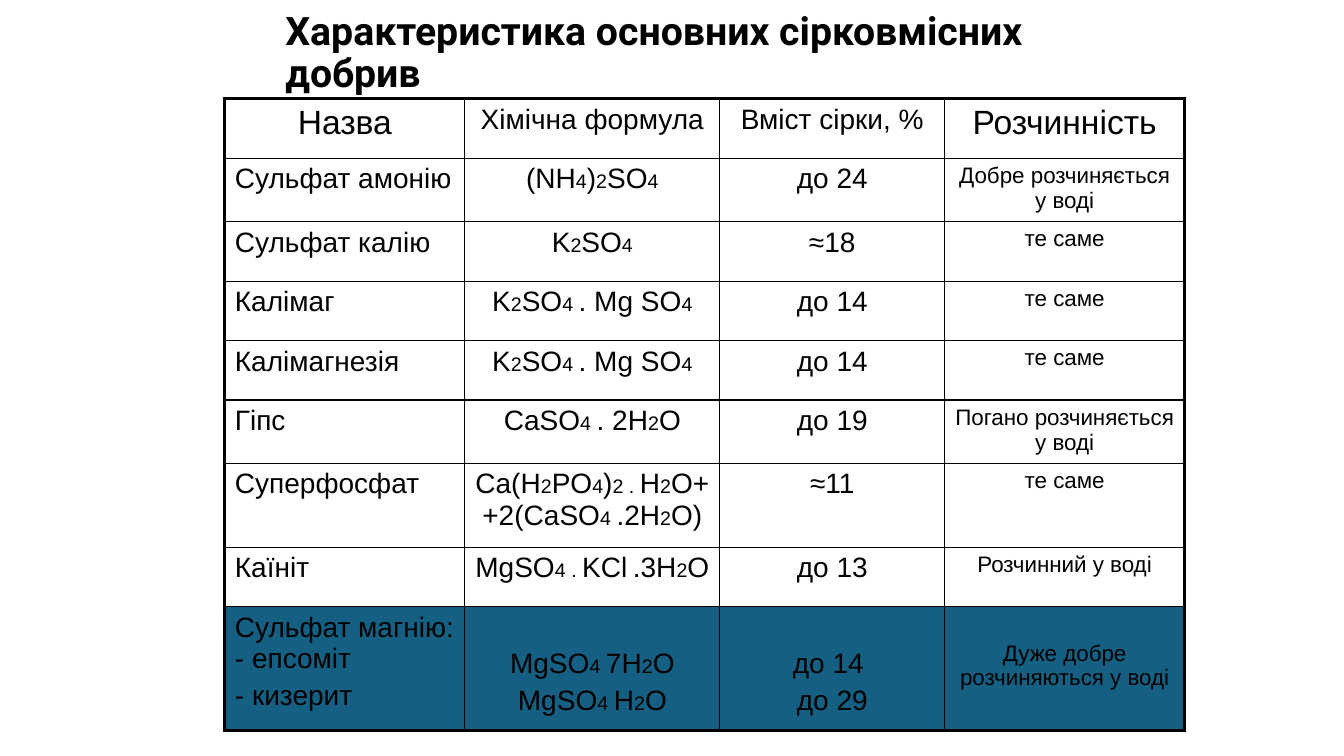
from pptx import Presentation
from pptx import util as u
from pptx.dml.color import RGBColor
from pptx.enum import text
from pptx.oxml import parse_xml
from pptx.oxml.ns import nsdecls

BLACK, WHITE, BLUE = "000000", "FFFFFF", "156082"
COLS = [2.38, 2.53, 2.23, 2.38]
ROWS = [0.59, 0.63, 0.59, 0.59, 0.59, 0.63, 0.83, 0.59, 1.23]
HEAD = [24, 20, 20, 24]
BODY = [20, 20, 20, 16]
DATA = [
    ["Назва", "Хімічна формула", "Вміст сірки, %", "Розчинність"],
    ["Сульфат амонію", "(NH_4_)_2_SO_4", "до 24", "Добре розчиняється у воді"],
    ["Сульфат калію", "K_2_SO_4", "≈18", "те саме"],
    ["Калімаг", "K_2_SO_4 _. Mg SO_4", "до 14", "те саме"],
    ["Калімагнезія", "K_2_SO_4 _. Mg SO_4", "до 14", "те саме"],
    ["Гіпс", "CaSO_4 _. 2H_2_O", "до 19", "Погано розчиняється у воді"],
    ["Суперфосфат", "Ca(H_2_PO_4_)_2 . _H_2_O+ +2(CaSO_4 _.2H_2_O)", "≈11", "те саме"],
    ["Каїніт", "MgSO_4 . _KCl_ _.3H_2_O", "до 13", "Розчинний у воді"],
    ["Сульфат магнію: - епсоміт\n- кизерит", "MgSO_4 _7H_2_O\nMgSO_4 _H_2_O",
     "до 14 \nдо 29", "Дуже добре розчиняються у воді"],
]
DROPS = [0.05, 0.41, 0.41, 0.34]


def color(code):
    return RGBColor.from_string(code)


def style(font, name, size, bold=False):
    font.name = name
    font.size = u.Pt(size)
    font.bold = bold
    font.color.rgb = color(BLACK)


def write(para, words, size):
    style(para.font, "Arial", size)
    for i, part in enumerate(words.split("_")):
        if part:
            run = para.add_run()
            run.text = part
            if i % 2:
                run.font.size = u.Pt(14)


def border(cell, row, col):
    outer = {"lnL": col == 0, "lnR": col == len(COLS) - 1,
             "lnT": row == 0, "lnB": row == len(ROWS) - 1}
    props = cell._tc.get_or_add_tcPr()
    for i, (side, edge) in enumerate(outer.items()):
        width = u.Pt(2.25 if edge else 1)
        props.insert(i, parse_xml(
            f'<a:{side} {nsdecls("a")} w="{width}"><a:solidFill>'
            f'<a:srgbClr val="{BLACK}"/></a:solidFill></a:{side}>'))


def fill_cell(cell, row, col):
    last = row == len(ROWS) - 1
    cell.fill.solid()
    cell.fill.fore_color.rgb = color(BLUE if last else WHITE)
    cell.margin_top = u.Inches(DROPS[col] if last else 0.05)
    border(cell, row, col)
    frame = cell.text_frame
    size = (BODY if row else HEAD)[col]
    for i, words in enumerate(DATA[row][col].split("\n")):
        para = frame.add_paragraph() if i else frame.paragraphs[0]
        if i:
            para.space_before = u.Pt(4)
        left = row and col == 0
        para.alignment = text.PP_ALIGN.LEFT if left else text.PP_ALIGN.CENTER
        write(para, words, size)


def add_title(slide, words):
    title = slide.shapes.title
    title.left, title.top = u.Inches(2.73), u.Inches(0)
    title.width, title.height = u.Inches(8.52), u.Inches(1.07)
    frame = title.text_frame
    frame.text = words
    frame.word_wrap = True
    frame.vertical_anchor = text.MSO_ANCHOR.MIDDLE
    para = frame.paragraphs[0]
    para.alignment = text.PP_ALIGN.LEFT
    para.line_spacing = 0.9
    style(para.font, "Roboto", 28, True)


def add_grid(slide):
    table = slide.shapes.add_table(
        len(ROWS), len(COLS), u.Inches(2.23), u.Inches(0.98),
        u.Inches(sum(COLS)), u.Inches(sum(ROWS))).table
    table.first_row = table.horz_banding = False
    for col, width in enumerate(COLS):
        table.columns[col].width = u.Inches(width)
    for row, height in enumerate(ROWS):
        table.rows[row].height = u.Inches(height)
        for col in range(len(COLS)):
            fill_cell(table.cell(row, col), row, col)


def main():
    deck = Presentation()
    deck.slide_width, deck.slide_height = u.Inches(13.33), u.Inches(7.5)
    slide = deck.slides.add_slide(deck.slide_layouts[5])
    add_title(slide, "Характеристика основних сірковмісних добрив")
    add_grid(slide)
    deck.save("out.pptx")


if __name__ == "__main__":
    main()
